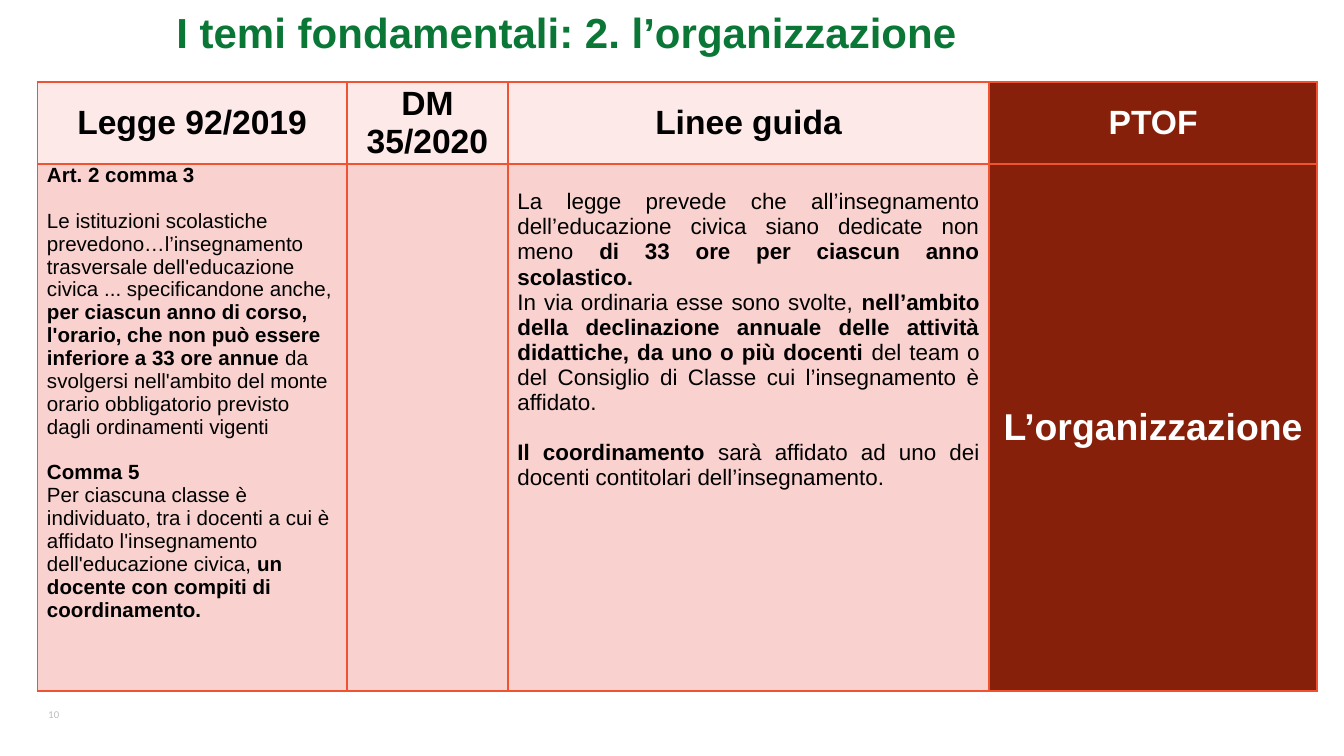
from lxml.etree import SubElement
from pptx import Presentation
from pptx.dml.color import RGBColor
from pptx.enum.text import MSO_ANCHOR, MSO_AUTO_SIZE, PP_ALIGN
from pptx.oxml.ns import qn
from pptx.util import Inches, Pt

WIDTH = 10
HEIGHT = WIDTH * 9 / 16
COLUMNS = [2.3, 1.2, 3.58, 2.44]
ROWS = [0.61, 3.92]
GREEN, GREY, BLACK, WHITE = "0A7736", "B9B8BB", "000000", "FFFFFF"
ORANGE, BROWN, PALE, PINK = "F05332", "87200A", "FCE9E8", "F9D1CE"

HEADERS = ["Legge 92/2019", "DM 35/2020", "Linee guida", "PTOF"]

# Each paragraph: (gap before in lines, text with **bold** parts)
LAW = [
    (0, "**Art. 2 comma 3**"),
    (1, "Le istituzioni scolastiche prevedono…l’insegnamento trasversale "
        "dell'educazione civica ... specificandone anche, **per ciascun anno di corso, "
        "l'orario, che non può essere inferiore a 33 ore annue **da svolgersi "
        "nell'ambito del monte orario obbligatorio previsto dagli ordinamenti vigenti"),
    (1, "**Comma 5**"),
    (0, "Per ciascuna classe è individuato, tra i docenti a cui è affidato "
        "l'insegnamento dell'educazione civica, **un docente con compiti di "
        "coordinamento.**"),
]
GUIDELINES = [
    (0, "La legge prevede che all’insegnamento dell’educazione civica siano dedicate "
        "non meno **di 33 ore per ciascun anno scolastico. **"),
    (0, "In via ordinaria esse sono svolte, **nell’ambito della declinazione annuale "
        "delle attività didattiche, da uno o più docenti** del team o del Consiglio "
        "di Classe cui l’insegnamento è affidato."),
    (1, "**Il coordinamento** sarà affidato ad uno dei docenti contitolari "
        "dell’insegnamento."),
]


def color(hex_string):
    return RGBColor.from_string(hex_string)


def set_margins(target, left, top, right, bottom):
    target.margin_left, target.margin_top = Inches(left), Inches(top)
    target.margin_right, target.margin_bottom = Inches(right), Inches(bottom)


def write_paragraphs(frame, paragraphs, size, ink, align, font="Arial"):
    for index, (gap, text) in enumerate(paragraphs):
        paragraph = frame.add_paragraph() if index else frame.paragraphs[0]
        paragraph.alignment = align
        if gap:
            paragraph.space_before = Pt(gap * size * 1.12)
        paragraph.font.size = Pt(size)
        paragraph.font.name = font
        paragraph.font.color.rgb = color(ink)
        for part, words in enumerate(text.split("**")):
            if words:
                run = paragraph.add_run()
                run.text = words
                run.font.bold = part % 2 == 1


def add_borders(cell, ink, points):
    properties = cell._tc.get_or_add_tcPr()
    for position, side in enumerate(("a:lnL", "a:lnR", "a:lnT", "a:lnB")):
        line = SubElement(properties, qn(side), w=str(Pt(points)))
        fill = SubElement(line, qn("a:solidFill"))
        SubElement(fill, qn("a:srgbClr"), val=ink)
        properties.insert(position, line)


def fill_cell(cell, background, paragraphs=(), size=18, ink=BLACK,
              align=PP_ALIGN.CENTER, anchor=MSO_ANCHOR.MIDDLE, side=0.07, top=0):
    cell.fill.solid()
    cell.fill.fore_color.rgb = color(background)
    add_borders(cell, ORANGE, 1)
    set_margins(cell, side, top, side, 0)
    cell.vertical_anchor = anchor
    write_paragraphs(cell.text_frame, paragraphs, size, ink, align)


def add_title(slide, text):
    title = slide.shapes.title
    title.left, title.top = Inches(0.43), Inches(0)
    title.width, title.height = Inches(7.58), Inches(0.47)
    frame = title.text_frame
    frame.auto_size = MSO_AUTO_SIZE.NONE
    frame.vertical_anchor = MSO_ANCHOR.MIDDLE
    set_margins(frame, 0, 0, 0, 0)
    write_paragraphs(frame, [(0, f"**{text}**")], 22.5, GREEN, PP_ALIGN.CENTER)


def add_comparison(slide):
    table = slide.shapes.add_table(
        len(ROWS), len(COLUMNS), Inches(0.28), Inches(0.61),
        Inches(sum(COLUMNS)), Inches(sum(ROWS))).table
    for column, width in zip(table.columns, COLUMNS):
        column.width = Inches(width)
    for row, height in zip(table.rows, ROWS):
        row.height = Inches(height)

    for index, header in enumerate(HEADERS):
        background, ink = (BROWN, WHITE) if header == "PTOF" else (PALE, BLACK)
        fill_cell(table.cell(0, index), background, [(0, f"**{header}**")],
                  ink=ink, side=0.05)

    law, decree, guidelines, plan = table.rows[1].cells
    fill_cell(law, PINK, LAW, 11, align=PP_ALIGN.LEFT, anchor=MSO_ANCHOR.TOP)
    fill_cell(decree, PINK)
    fill_cell(guidelines, PINK, GUIDELINES, 12, align=PP_ALIGN.JUSTIFY,
              anchor=MSO_ANCHOR.TOP, top=0.19)
    fill_cell(plan, BROWN, [(0, "**L’organizzazione**")], 20, WHITE)


def add_page_number(slide, number):
    box = slide.shapes.add_textbox(
        Inches(0.36), Inches(5.24), Inches(0.35), Inches(0.16))
    frame = box.text_frame
    frame.word_wrap = False
    frame.vertical_anchor = MSO_ANCHOR.MIDDLE
    set_margins(frame, 0, 0.04, 0.07, 0.04)
    write_paragraphs(frame, [(0, number)], 5, GREY, PP_ALIGN.LEFT, "Lato")


def main():
    presentation = Presentation()
    presentation.slide_width = Inches(WIDTH)
    presentation.slide_height = Inches(HEIGHT)
    slide = presentation.slides.add_slide(presentation.slide_layouts[5])
    add_title(slide, "I temi fondamentali: 2. l’organizzazione")
    add_comparison(slide)
    add_page_number(slide, "10")
    presentation.save("out.pptx")


if __name__ == "__main__":
    main()
